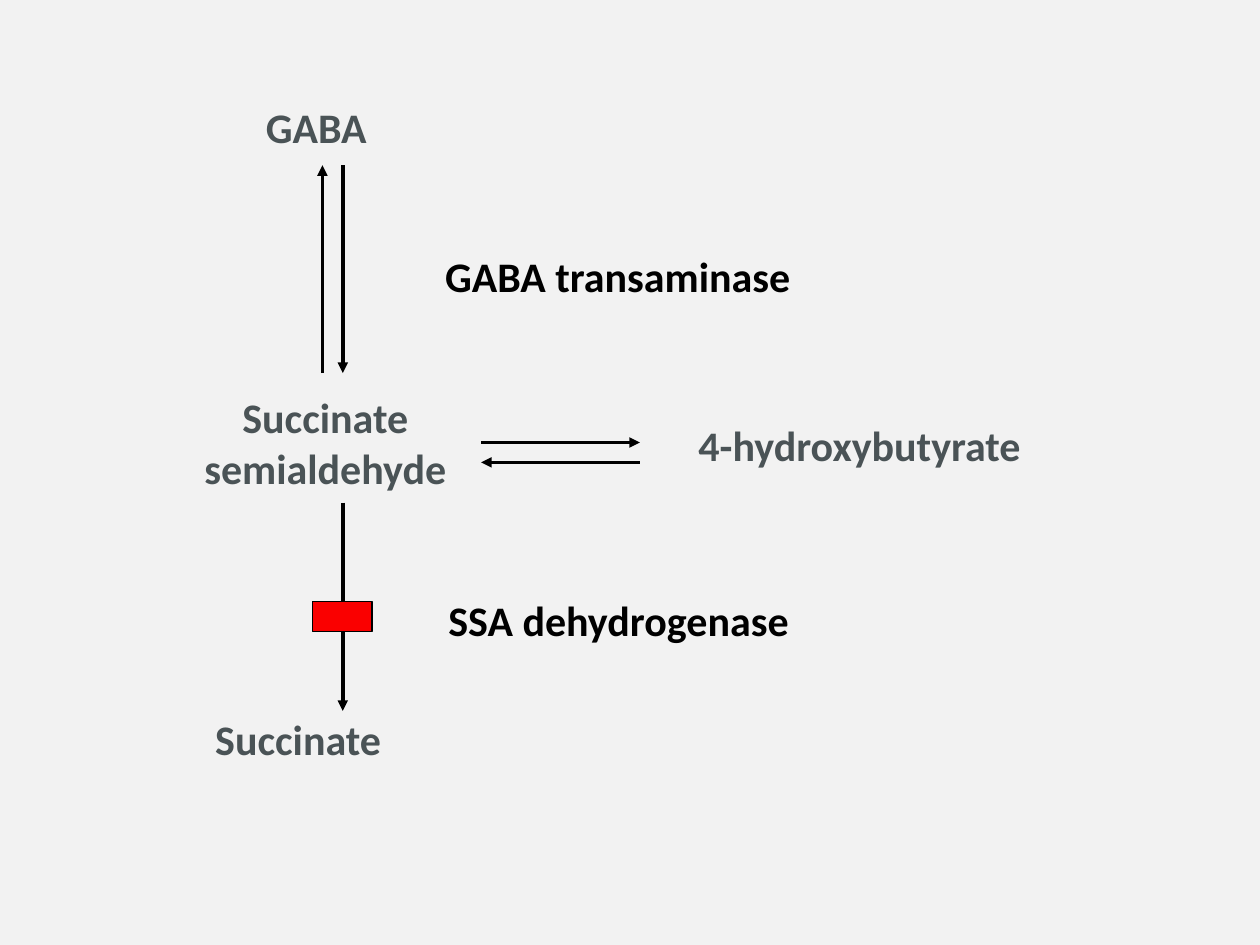
from pptx import Presentation
from pptx.dml.color import RGBColor
from pptx.enum.shapes import MSO_CONNECTOR as Link, MSO_SHAPE as Shape
from pptx.enum.text import MSO_AUTO_SIZE as Fit, PP_ALIGN as Align
from pptx.oxml.ns import qn
from pptx.util import Cm, Pt
from lxml.etree import SubElement

BACKGROUND = RGBColor(0xF2, 0xF2, 0xF2)
SLATE = RGBColor(0x4A, 0x53, 0x56)
BLACK = RGBColor(0, 0, 0)
RED = RGBColor(0xFA, 0, 0)


class Pathway:
    """Style and current slide of a metabolic pathway diagram."""

    font = {"name": "Calibri", "size": Pt(24), "bold": True}
    arrow_width = Pt(2)
    block_outline = Pt(0.75)

    def __init__(self, deck):
        self.page = deck.slides.add_slide(deck.slide_layouts[6])
        fill = self.page.background.fill
        fill.solid()
        fill.fore_color.rgb = BACKGROUND

    def label(self, lines, left, top, width, height=1.27,
              color=SLATE, align=Align.CENTER):
        box = self.page.shapes.add_textbox(
            Cm(left), Cm(top), Cm(width), Cm(height))
        frame = box.text_frame
        frame.word_wrap = False
        frame.auto_size = Fit.SHAPE_TO_FIT_TEXT
        frame.text = "\n".join(lines)
        for para in frame.paragraphs:
            para.alignment = align
            for span in para.runs:
                for key, value in self.font.items():
                    setattr(span.font, key, value)
                span.font.color.rgb = color

    def arrow(self, x1, y1, x2, y2):
        """Draw an arrow whose head is at the second point."""
        line = self.page.shapes.add_connector(
            Link.STRAIGHT, Cm(x1), Cm(y1), Cm(x2), Cm(y2))
        line.line.color.rgb = BLACK
        line.line.width = self.arrow_width
        properties = line._element.spPr
        SubElement(properties.find(qn("a:ln")), qn("a:tailEnd"), type="triangle")
        SubElement(properties, qn("a:effectLst"))

    def block(self, left, top, width, height):
        """Mark a blocked reaction step."""
        mark = self.page.shapes.add_shape(
            Shape.RECTANGLE, Cm(left), Cm(top), Cm(width), Cm(height))
        mark.shadow.inherit = False
        mark.fill.solid()
        mark.fill.fore_color.rgb = RED
        mark.line.color.rgb = BLACK
        mark.line.width = self.block_outline


def main():
    deck = Presentation()
    deck.slide_width, deck.slide_height = Cm(25.4), Cm(19.05)
    pathway = Pathway(deck)

    pathway.label(["GABA"], 5.11, 1.93, 3, align=Align.LEFT)
    pathway.label(["Succinate ", "semialdehyde "], 3.48, 7.77, 6.35, 2.29)
    pathway.label(["Succinate"], 4.09, 14.25, 4.52, align=Align.LEFT)
    pathway.label(["GABA transaminase"], 8.1, 4.93, 8.71, color=BLACK)
    pathway.label(["SSA dehydrogenase"], 8.1, 11.86, 8.74, color=BLACK)
    pathway.label(["4-hydroxybutyrate "], 13.36, 8.33, 8.13)

    down, up = 6.91, 6.5
    upper, lower = 3.33, 7.52
    pathway.arrow(down, upper, down, lower)
    pathway.arrow(up, lower, up, upper)
    pathway.arrow(down, 10.13, down, 14.33)

    near, far = 9.7, 12.9
    pathway.arrow(near, 8.92, far, 8.92)
    pathway.arrow(far, 9.32, near, 9.32)

    pathway.block(6.3, 12.12, 1.2, 0.61)
    deck.save("out.pptx")


if __name__ == "__main__":
    main()
